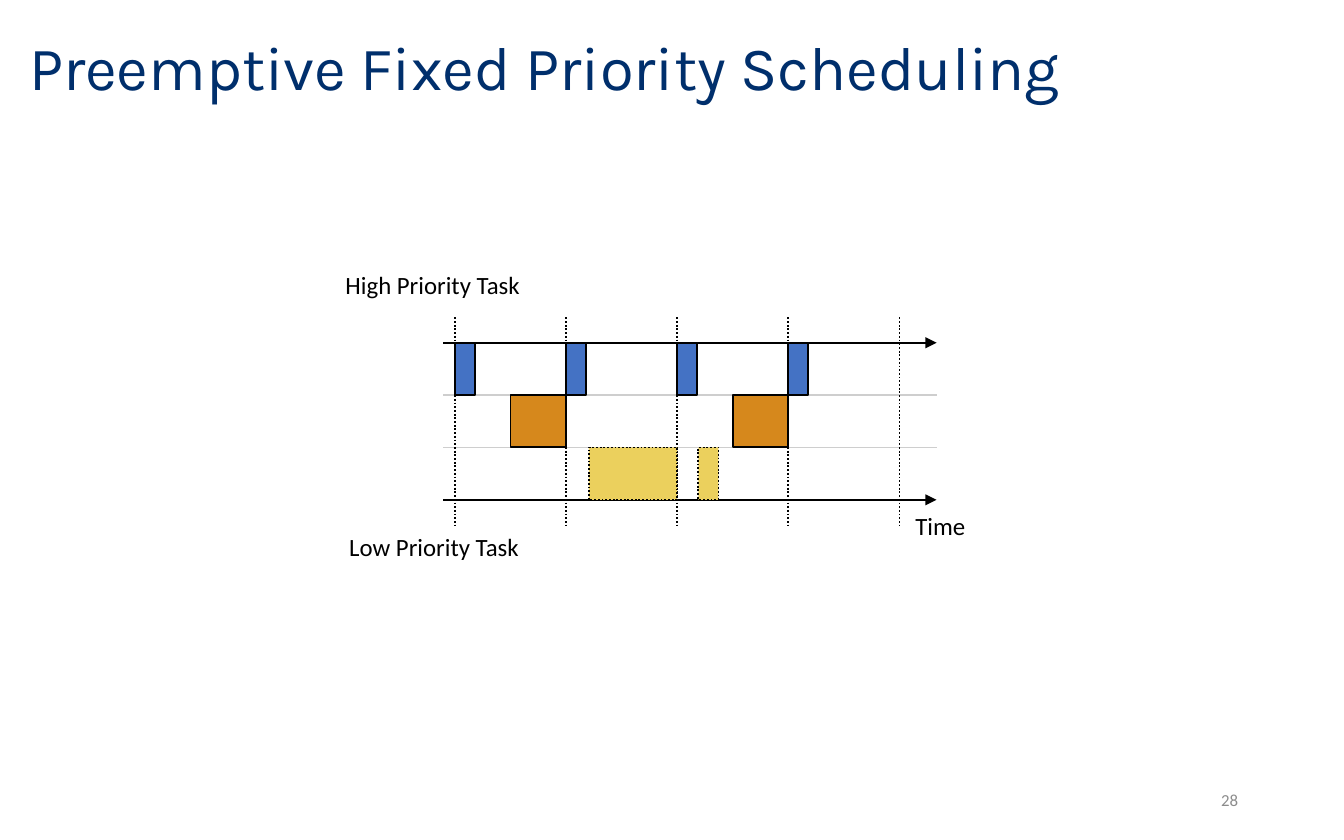
"""Build a slide with a timeline of preemptive fixed priority scheduling."""
import pptx
import pptx.dml.color
import pptx.enum.dml
import pptx.enum.shapes
import pptx.enum.text
import pptx.oxml
import pptx.oxml.ns
import pptx.util

Cm = pptx.util.Cm
RGB = pptx.dml.color.RGBColor
DOT = pptx.enum.dml.MSO_LINE.ROUND_DOT
ALIGN = pptx.enum.text.PP_ALIGN
NAVY = RGB(0x00, 0x2F, 0x6C)
BLACK = RGB(0x00, 0x00, 0x00)
GREY = RGB(0x8C, 0x8C, 0x8C)
PALE = RGB(0xCE, 0xCE, 0xCE)
BLUE = RGB(0x44, 0x72, 0xC4)
ORANGE = RGB(0xD6, 0x88, 0x1C)
YELLOW = RGB(0xEB, 0xD0, 0x5D)


def write(shape, text, size=13.3, font="Calibri", color=BLACK,
          align=ALIGN.LEFT, inset=0.0, space=1.0):
    frame = shape.text_frame
    frame.word_wrap = True
    frame.auto_size = pptx.enum.text.MSO_AUTO_SIZE.NONE
    frame.vertical_anchor = pptx.enum.text.MSO_ANCHOR.MIDDLE
    frame.margin_left = frame.margin_right = Cm(inset)
    frame.margin_top = frame.margin_bottom = Cm(inset / 2)
    frame.text = text
    para = frame.paragraphs[0]
    para.alignment = align
    para.line_spacing = space
    face = para.runs[0].font
    face.size = pptx.util.Pt(size)
    face.name = font
    face.color.rgb = color


def rule(left, top, right, bottom, color=BLACK, dash=None, arrow=False):
    line = slide.shapes.add_connector(
        pptx.enum.shapes.MSO_CONNECTOR.STRAIGHT,
        Cm(left), Cm(top), Cm(right), Cm(bottom))
    line.line.color.rgb = color
    line.line.width = pptx.util.Pt(1)
    if dash:
        line.line.dash_style = dash
    if arrow:
        tip = pptx.oxml.parse_xml(
            f'<a:tailEnd {pptx.oxml.ns.nsdecls("a")} type="triangle"/>')
        line.line._get_or_add_ln().append(tip)
    line._element.spPr.append(pptx.oxml.parse_xml(
        f'<a:effectLst {pptx.oxml.ns.nsdecls("a")}/>'))


deck = pptx.Presentation()
deck.slide_width = Cm(25.4)
deck.slide_height = Cm(15.88)
slide = deck.slides.add_slide(deck.slide_layouts[5])

title = slide.shapes.title
title.left, title.top = Cm(0.3), Cm(0.25)
title.width, title.height = Cm(21.64), Cm(2.18)
write(title, "Preemptive Fixed Priority Scheduling", size=33, font="Karla",
      color=NAVY, inset=0.25, space=0.9)

ticks = [8.6 + 2.1 * i for i in range(5)]
rows = [6.48 + 0.99 * i for i in range(4)]

for row in (rows[0], rows[3]):
    rule(8.38, row, 17.7, row, arrow=True)
for row in rows[1:3]:
    rule(8.38, row, 17.7, row, color=PALE)
for tick in ticks:
    rule(tick, 6, tick, 9.93, dash=DOT)

tasks = [(tick, 0, 0.38, BLUE) for tick in ticks[:4]]
tasks += [(tick - 1.05, 1, 1.05, ORANGE) for tick in (ticks[1], ticks[3])]
tasks += [(11.13, 2, 1.67, YELLOW), (13.2, 2, 0.38, YELLOW)]
for left, row, width, color in tasks:
    task = slide.shapes.add_shape(
        pptx.enum.shapes.MSO_SHAPE.RECTANGLE,
        Cm(left), Cm(rows[row]), Cm(width), Cm(0.99))
    task.shadow.inherit = False
    task.fill.solid()
    task.fill.fore_color.rgb = color
    task.line.color.rgb = BLACK
    task.line.width = pptx.util.Pt(1)
    if color == YELLOW:
        task.line.dash_style = DOT

labels = [
    ("High Priority Task", 6.53, 5.11, 4.6),
    ("Low Priority Task", 6.6, 10.06, 4.6),
    ("Time", 17.3, 9.68, 1.83),
]
for text, left, top, width in labels:
    label = slide.shapes.add_textbox(Cm(left), Cm(top), Cm(width), Cm(0.53))
    write(label, text)

number = slide.shapes.add_textbox(Cm(17.93), Cm(14.71), Cm(5.72), Cm(0.84))
write(number, "28", size=9, color=GREY, align=ALIGN.RIGHT, inset=0.25)

deck.save("out.pptx")
